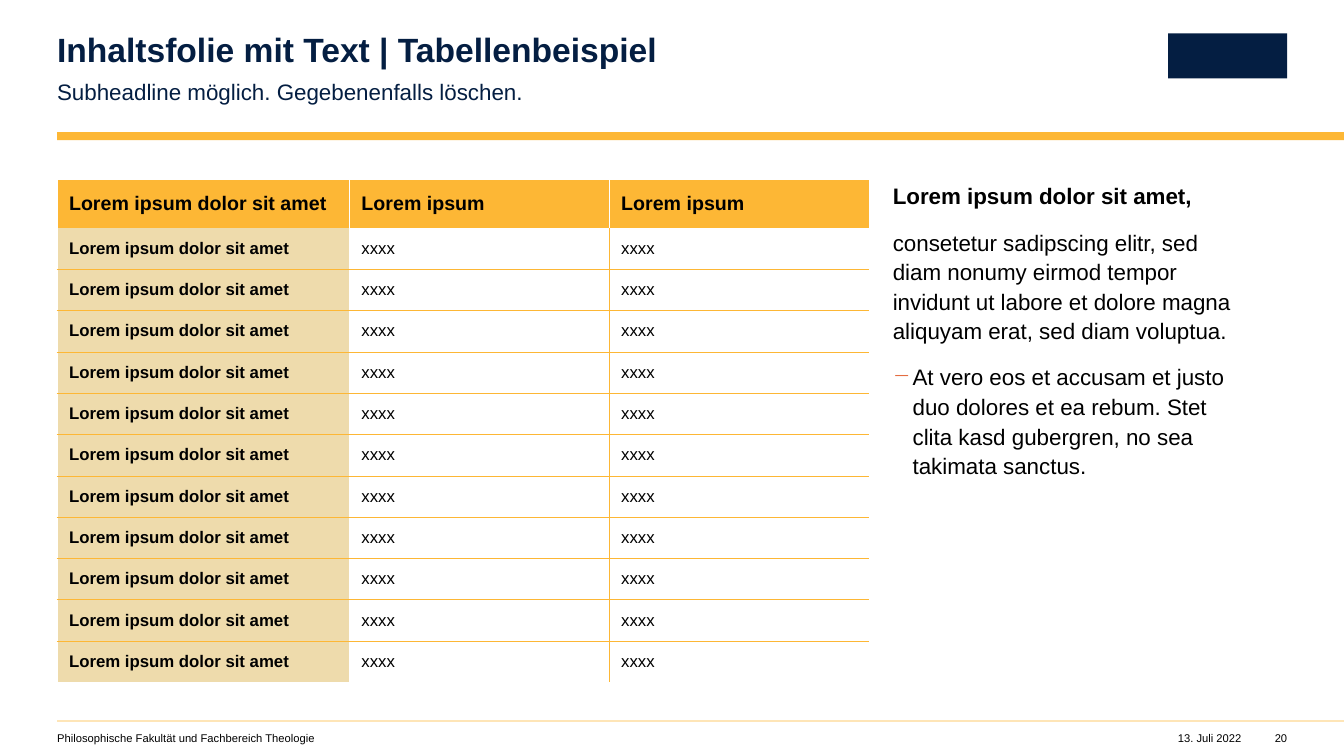
from lxml import etree
from pptx import Presentation, util as u
from pptx.dml.color import RGBColor
from pptx.enum import shapes, text
from pptx.oxml import ns

HEX = {"gold": "FDB735", "sand": "EEDBAC", "navy": "041E42",
       "rust": "E46D41", "black": "000000", "white": "FFFFFF"}
STYLE = {
    "title": {"size": 24, "bold": True, "ink": "navy", "line_spacing": 0.9},
    "sub": {"size": 16, "ink": "navy", "line_spacing": 1.1},
    "lead": {"size": 16, "bold": True, "line_spacing": 1.1, "space_after": u.Pt(12)},
    "copy": {"size": 16, "line_spacing": 1.1, "space_after": u.Pt(12)},
    "foot": {"size": 8},
    "right": {"size": 8, "alignment": text.PP_ALIGN.RIGHT},
    "top": {"size": 14, "bold": True},
    "label": {"size": 12, "bold": True},
    "value": {"size": 12},
}
WIDE, HIGH = 33.87, 19.05
PLAIN = "{2D5ABB26-0587-4C30-8999-92F81FD0307C}"
ROWS = [["Lorem ipsum dolor sit amet", "Lorem ipsum", "Lorem ipsum"]]
ROWS += [["Lorem ipsum dolor sit amet", "xxxx", "xxxx"]] * 11
COPY = [
    ("Lorem ipsum dolor sit amet,", "lead"),
    ("consetetur sadipscing elitr, sed diam nonumy eirmod tempor invidunt ut "
     "labore et dolore magna aliquyam erat, sed diam voluptua.", "copy"),
    ("At vero eos et accusam et justo duo dolores et ea rebum. Stet clita kasd "
     "gubergren, no sea takimata sanctus.", "copy"),
]


def paint(fill, name):
    fill.solid()
    fill.fore_color.rgb = RGBColor.from_string(HEX[name])


def node(root, tag, **attrs):
    return etree.SubElement(root, ns.qn(tag), attrs)


def tint(root, name):
    node(root, "a:srgbClr", val=HEX[name])


def write(par, words, style):
    """Fill a paragraph and apply the named style."""
    run = par.add_run()
    run.text = words
    form = {"name": "Arial", "bold": False, "ink": "black", **STYLE[style]}
    paint(run.font.fill, form.pop("ink"))
    form["size"] = u.Pt(form["size"])
    for key, val in form.items():
        setattr(run.font if key in ("name", "bold", "size") else par, key, val)


def block(slide, box, items, right=0):
    """Add a text box holding (words, style) paragraphs."""
    frame = slide.shapes.add_textbox(*map(u.Cm, box)).text_frame
    form = {"word_wrap": True, "margin_left": 0, "margin_top": 0,
            "margin_right": u.Cm(right), "margin_bottom": 0}
    for key, val in form.items():
        setattr(frame, key, val)
    for i, (words, style) in enumerate(items):
        write(frame.add_paragraph() if i else frame.paragraphs[0], words, style)
    return frame


def bar(slide, box, name):
    shape = slide.shapes.add_shape(shapes.MSO_SHAPE.RECTANGLE, *map(u.Cm, box))
    shape.shadow.inherit = False
    paint(shape.fill, name)
    shape.line.fill.background()


def head(slide, box):
    x, y, w, h = box
    block(slide, (x, y, 19.02, 0.91), [("Inhaltsfolie mit Text | Tabellenbeispiel", "title")])
    block(slide, (x, y + 1.07, 19.02, 0.69),
          [("Subheadline möglich. Gegebenenfalls löschen.", "sub")], 1)
    bar(slide, (x + 28, y, 3, 1.14), "navy")
    bar(slide, (x, y + h - 0.2, w, 0.2), "gold")


def foot(slide, box):
    x, y, w, h = box
    bar(slide, (x, y, w, 0.02), "gold")
    parts = [(0, 15.2, "Philosophische Fakultät und Fachbereich Theologie", "foot"),
             (27.49, 2.36, "13. Juli 2022", "right"),
             (30.45, 0.55, "20", "right")]
    for dx, wide, words, style in parts:
        block(slide, (x + dx, y + 0.27, wide, h - 0.27), [(words, style)])


def edges(row, col):
    """Give the border of each side of a cell as (colour, points)."""
    top, last = row == 0, row == len(ROWS) - 1
    side = ("white", 0.5) if top else ("white", 1)
    mid = ("white", 0.5) if top else ("gold", 0.25)
    rule = ("gold", 0.25)
    return {"a:lnL": [("white", 1), side, mid][col],
            "a:lnR": [side, mid, None][col],
            "a:lnT": ("white", 1) if top else rule if row > 1 else None,
            "a:lnB": None if top or last else rule}


def grid(slide, box):
    x, y, w, h = box
    first, top = 7.37, 1.21
    table = slide.shapes.add_table(len(ROWS), 3, *map(u.Cm, box)).table
    table.first_row = table.horz_banding = False
    table._tbl.tblPr.find(ns.qn("a:tableStyleId")).text = PLAIN
    for i, col in enumerate(table.columns):
        col.width = u.Cm((w - first) / 2 if i else first)
    for r, words in enumerate(ROWS):
        table.rows[r].height = u.Cm((h - top) / (len(ROWS) - 1) if r else top)
        for c, word in enumerate(words):
            cell = table.cell(r, c)
            form = {"vertical_anchor": text.MSO_ANCHOR.MIDDLE,
                    "margin_left": u.Cm(0.3), "margin_right": u.Cm(0.3),
                    "margin_top": u.Cm(0.1), "margin_bottom": u.Cm(0.1)}
            for key, val in form.items():
                setattr(cell, key, val)
            for tag, edge in edges(r, c).items():
                if edge:
                    line = node(cell._tc.get_or_add_tcPr(), tag, w=str(u.Pt(edge[1])))
                    tint(node(line, "a:solidFill"), edge[0])
            if r and c:
                cell.fill.background()
            else:
                paint(cell.fill, "sand" if r else "gold")
            style = "value" if r and c else "label" if r else "top"
            write(cell.text_frame.paragraphs[0], word, style)


def body(slide, box):
    par = block(slide, box, COPY, 1).paragraphs[-1]
    props = par._p.get_or_add_pPr()
    for key, val in {"marL": u.Cm(0.5), "indent": u.Cm(-0.5)}.items():
        props.set(key, str(val))
    tint(node(props, "a:buClr"), "rust")
    node(props, "a:buChar", char="−")


def main():
    deck = Presentation()
    deck.slide_width, deck.slide_height = u.Cm(WIDE), u.Cm(HIGH)
    slide = deck.slides.add_slide(deck.slide_layouts[6])
    left, top = 1.44, 4.53
    head(slide, (left, 0.84, WIDE - left, 2.69))
    grid(slide, (left, top, 20.46, 12.67))
    body(slide, (22.5, top, 9.93, 12.7))
    foot(slide, (left, 18.16, WIDE - left, 0.6))
    deck.save("out.pptx")


if __name__ == "__main__":
    main()
